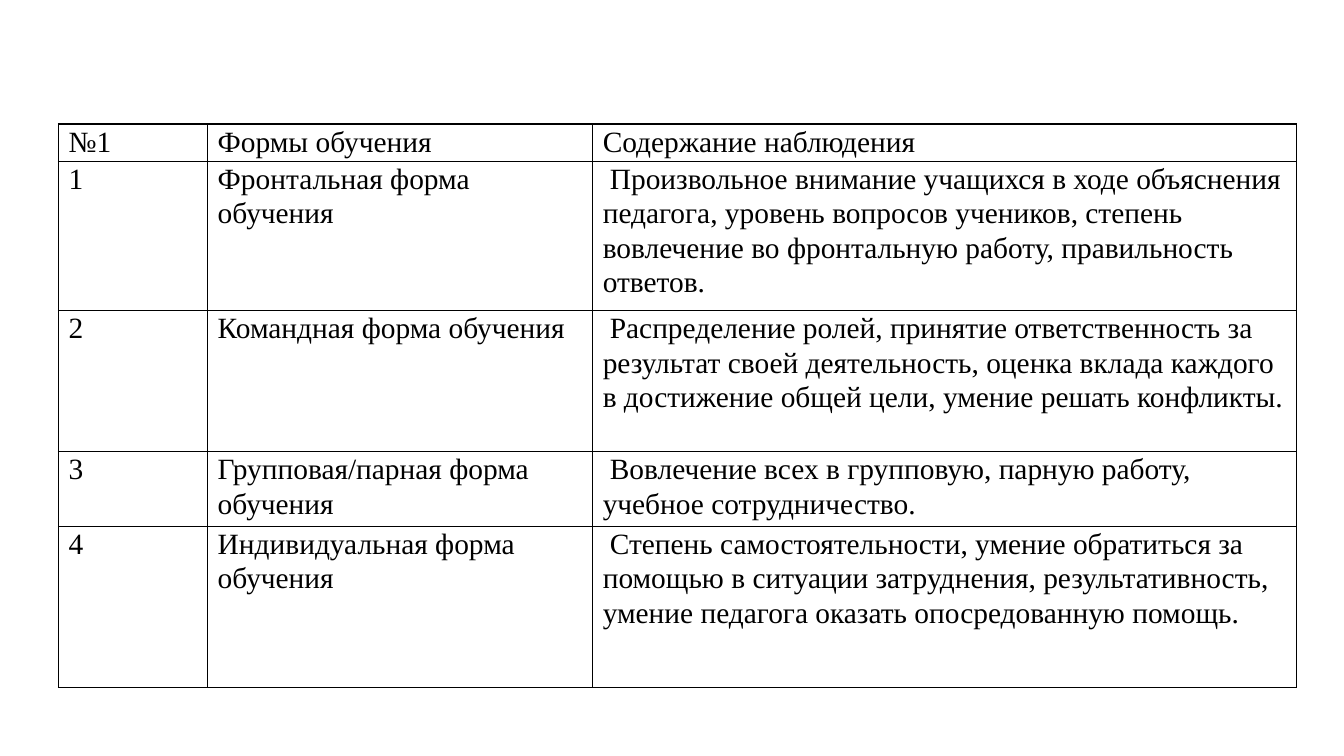
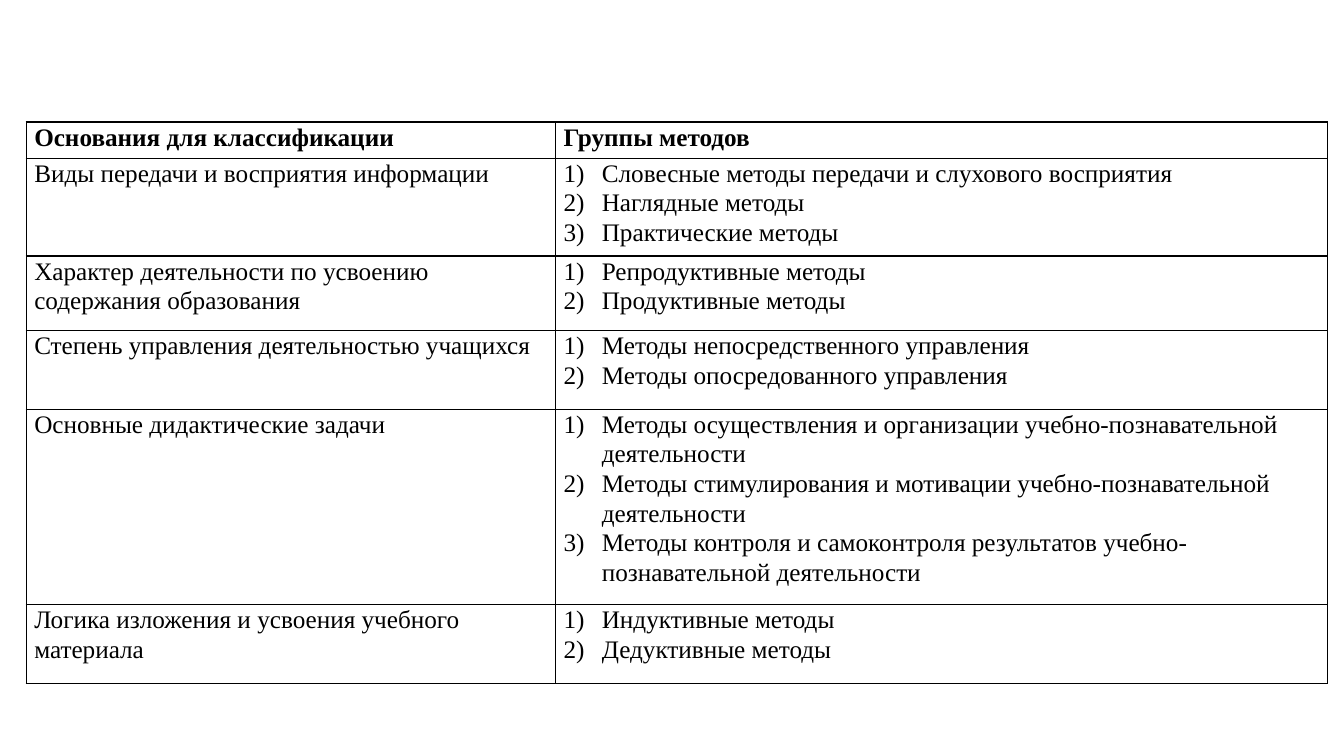
from lxml.etree import SubElement
from pptx import Presentation
from pptx.dml.color import RGBColor
from pptx.oxml.ns import qn
from pptx.util import Inches, Pt

FORMS = [
    ["№1", "Формы обучения", "Содержание наблюдения"],
    ["1", "Фронтальная форма обучения",
     "Произвольное внимание учащихся в ходе объяснения педагога, уровень "
     "вопросов учеников, степень вовлечение во фронтальную работу, "
     "правильность ответов."],
    ["2", "Командная форма обучения",
     "Распределение ролей, принятие ответственность за результат своей "
     "деятельность, оценка вклада каждого в достижение общей цели, умение "
     "решать конфликты."],
    ["3", "Групповая/парная форма обучения",
     "Вовлечение всех в групповую, парную работу, учебное сотрудничество."],
    ["4", "Индивидуальная форма обучения",
     "Степень самостоятельности, умение обратиться за помощью в ситуации "
     "затруднения, результативность, умение педагога оказать "
     "опосредованную помощь."],
]

METHODS = [
    ["Основания для классификации", "Группы методов"],
    ["Виды передачи и восприятия информации",
     ["Словесные методы передачи и слухового восприятия",
      "Наглядные методы", "Практические методы"]],
    ["Характер деятельности по усвоению содержания образования",
     ["Репродуктивные методы", "Продуктивные методы"]],
    ["Степень управления деятельностью учащихся",
     ["Методы непосредственного управления",
      "Методы опосредованного управления"]],
    ["Основные дидактические задачи",
     ["Методы осуществления и организации учебно-познавательной деятельности",
      "Методы стимулирования и мотивации учебно-познавательной деятельности",
      "Методы контроля и самоконтроля результатов учебно-познавательной "
      "деятельности"]],
    ["Логика изложения и усвоения учебного материала",
     ["Индуктивные методы", "Дедуктивные методы"]],
]


def color(code):
    return RGBColor.from_string(code)


class Deck:
    """Holds the shared style and the current slide; lengths are percents of the slide."""
    font = "Times New Roman"
    ink = "000000"
    line = 1
    lead = 1.06
    after = 8
    hang = 0.38
    tab = 0.32

    def __init__(self):
        self.prs = Presentation()
        self.prs.slide_width = Inches(13.33)
        self.prs.slide_height = Inches(7.5)
        self.slide = None

    def across(self, share):
        return round(self.prs.slide_width * share / 100)

    def down(self, share):
        return round(self.prs.slide_height * share / 100)

    def add(self):
        self.slide = self.prs.slides.add_slide(self.prs.slide_layouts[6])

    def table(self, data, left, top, cols, rows, size, pad, head=False, first=0):
        """Draw a ruled table; head makes row one bold, first indents the last column below it."""
        frame = self.slide.shapes.add_table(
            len(rows), len(cols), self.across(left), self.down(top),
            self.across(sum(cols)), self.down(sum(rows)))
        table = frame.table
        table.first_row = table.horz_banding = False
        for col, share in zip(table.columns, cols):
            col.width = self.across(share)
        for row, share in zip(table.rows, rows):
            row.height = self.down(share)
        for r, texts in enumerate(data):
            for c, text in enumerate(texts):
                cell = table.cell(r, c)
                cell.margin_left = cell.margin_right = Inches(pad)
                cell.margin_top = cell.margin_bottom = 0
                self.border(cell)
                cell.fill.background()
                inner = first if r and c == len(cols) - 1 else 0
                self.text(cell.text_frame, text, size, head and r == 0, inner)

    def border(self, cell):
        props = cell._tc.get_or_add_tcPr()
        for side in ("a:lnL", "a:lnR", "a:lnT", "a:lnB"):
            edge = SubElement(props, qn(side), w=str(Pt(self.line)))
            fill = SubElement(edge, qn("a:solidFill"))
            SubElement(fill, qn("a:srgbClr"), val=self.ink)

    def text(self, frame, text, size, bold, first):
        """Fill a cell; a list of texts becomes a numbered list."""
        listed = isinstance(text, list)
        lines = text if listed else [text]
        for i, words in enumerate(lines):
            para = frame.add_paragraph() if i else frame.paragraphs[0]
            para.line_spacing = self.lead
            para.space_after = Pt(self.after if i == len(lines) - 1 else 0)
            if listed:
                self.number(para)
            elif first:
                para._p.get_or_add_pPr().set("indent", str(Inches(first)))
            run = para.add_run()
            run.text = words
            run.font.name = self.font
            run.font.size = Pt(size)
            run.font.bold = bold
            run.font.color.rgb = color(self.ink)

    def number(self, para):
        props = para._p.get_or_add_pPr()
        props.set("marL", str(Inches(self.hang)))
        props.set("indent", str(-Inches(self.hang)))
        SubElement(props, qn("a:buFont"), typeface=self.font)
        SubElement(props, qn("a:buAutoNum"), type="arabicParenR")
        tabs = SubElement(props, qn("a:tabLst"))
        SubElement(tabs, qn("a:tab"), pos=str(Inches(self.tab)), algn="l")


def main():
    deck = Deck()
    deck.add()
    deck.table(FORMS, 4.35, 16.4, [11.1, 28.65, 52.36],
               [4.93, 19.73, 18.67, 9.87, 21.33], size=21, pad=0.1, first=0.07)
    deck.add()
    deck.table(METHODS, 1.95, 16.13, [39.38, 57.46],
               [4.8, 12.93, 9.87, 10.4, 25.87, 10.4], size=18, pad=0.08, head=True)
    deck.prs.save("out.pptx")


if __name__ == "__main__":
    main()
